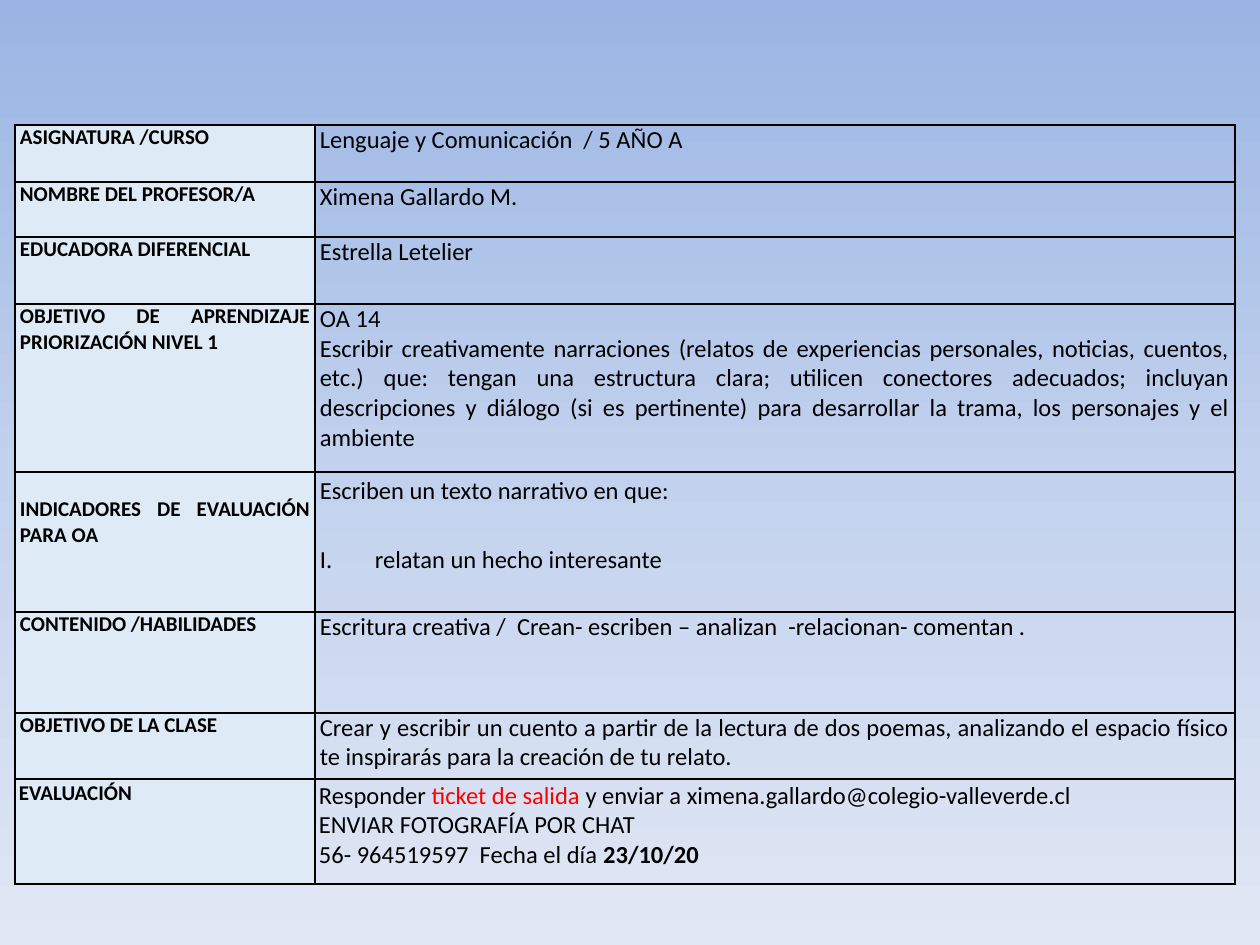
"""Build the lesson-plan slide: one table of class data on a blue gradient."""
from copy import deepcopy

from lxml import etree
from pptx import Presentation
from pptx import util as u
from pptx.dml.color import RGBColor
from pptx.enum import text
from pptx.oxml.ns import qn

PX = u.Inches(1) // 126


def color(value):
    return RGBColor.from_string(value)


def add_borders(cell):
    properties = cell._tc.get_or_add_tcPr()
    for index, side in enumerate(("lnL", "lnR", "lnT", "lnB")):
        line = etree.Element(qn(f"a:{side}"), w=str(u.Pt(1)))
        fill = etree.SubElement(line, qn("a:solidFill"))
        etree.SubElement(fill, qn("a:srgbClr"), val="000000")
        properties.insert(index, line)


COLUMNS = [300, 920]
ROWS = [
    (57, "ASIGNATURA /CURSO", "Lenguaje y Comunicación  / 5 AÑO A"),
    (55, "NOMBRE DEL PROFESOR/A", "Ximena Gallardo M."),
    (67, "EDUCADORA DIFERENCIAL", "Estrella Letelier"),
    (168, "OBJETIVO DE APRENDIZAJE PRIORIZACIÓN NIVEL 1",
     "OA 14\nEscribir creativamente narraciones (relatos de experiencias personales, "
     "noticias, cuentos, etc.) que: tengan una estructura clara; utilicen conectores "
     "adecuados; incluyan descripciones y diálogo (si es pertinente) para desarrollar "
     "la trama, los personajes y el ambiente"),
    (140, "INDICADORES DE EVALUACIÓN PARA OA",
     "Escriben un texto narrativo en que:\nrelatan un hecho interesante"),
    (101, "CONTENIDO /HABILIDADES",
     "Escritura creativa /  Crean- escriben – analizan  -relacionan- comentan ."),
    (66, "OBJETIVO DE LA CLASE",
     "Crear y escribir un cuento a partir de la lectura de dos poemas, analizando el "
     "espacio físico te inspirarás para la creación de tu relato."),
    (105, "EVALUACIÓN",
     "Responder \nENVIAR FOTOGRAFÍA POR CHAT\n56- 964519597  Fecha el día "),
]
INDICATORS, EVALUATION = 4, 7

presentation = Presentation()
presentation.slide_width, presentation.slide_height = u.Inches(10), u.Inches(7.5)
slide = presentation.slides.add_slide(presentation.slide_layouts[6])

background = slide.background.fill
background.gradient()
background.gradient_angle = 270
stop_list = slide.element.find(".//" + qn("a:gsLst"))
stop_list.insert(1, deepcopy(stop_list[0]))
gradient = [(0, "9AB5E4"), (0.5, "C2D1ED"), (1, "E1E8F5")]
for stop, (position, value) in zip(background.gradient_stops, gradient):
    stop.position = position
    stop.color.rgb = color(value)

height = sum(row[0] for row in ROWS)
table = slide.shapes.add_table(len(ROWS), 2, 15 * PX, 125 * PX,
                               sum(COLUMNS) * PX, height * PX).table
table.first_row = table.horz_banding = False
for column, width in zip(table.columns, COLUMNS):
    column.width = width * PX

for row_index, (row_height, *texts) in enumerate(ROWS):
    table.rows[row_index].height = row_height * PX
    last = row_index == EVALUATION
    for column_index, content in enumerate(texts):
        cell = table.cell(row_index, column_index)
        label = column_index == 0
        cell.margin_left = cell.margin_right = (4 if last else 5) * PX
        cell.margin_top = cell.margin_bottom = (2 if last else 0) * PX
        if label:
            cell.fill.solid()
            cell.fill.fore_color.rgb = color("DEEAF6")
        else:
            cell.fill.background()
        add_borders(cell)
        cell.text_frame.text = content
        for paragraph in cell.text_frame.paragraphs:
            paragraph.alignment = text.PP_ALIGN.JUSTIFY
            font = paragraph.runs[0].font
            font.name, font.size, font.bold = "Calibri", u.Pt(12 if label else 14), label
            font.color.rgb = color("000000")

table.cell(INDICATORS, 0).margin_top = 25 * PX
indicators = table.cell(INDICATORS, 1).text_frame.paragraphs
for paragraph in indicators:
    paragraph.alignment = text.PP_ALIGN.LEFT
    paragraph.line_spacing = 1.15
indicators[1].space_before = u.Pt(20)
properties = indicators[1]._p.get_or_add_pPr()
properties.set("marL", str(55 * PX))
properties.set("indent", str(-55 * PX))
etree.SubElement(properties, qn("a:buFont"), typeface="+mj-lt")
etree.SubElement(properties, qn("a:buAutoNum"), type="romanUcPeriod")

evaluation = table.cell(EVALUATION, 1).text_frame.paragraphs
extra_runs = [
    (0, "ticket de salida ", "FF0000", False),
    (0, "y enviar a ximena.gallardo@colegio-valleverde.cl ", "000000", False),
    (2, "23/10/20", "000000", True),
]
for index, content, value, bold in extra_runs:
    run = evaluation[index].add_run()
    run.text = content
    run.font.name, run.font.size, run.font.bold = "Calibri", u.Pt(14), bold
    run.font.color.rgb = color(value)

presentation.save("out.pptx")
